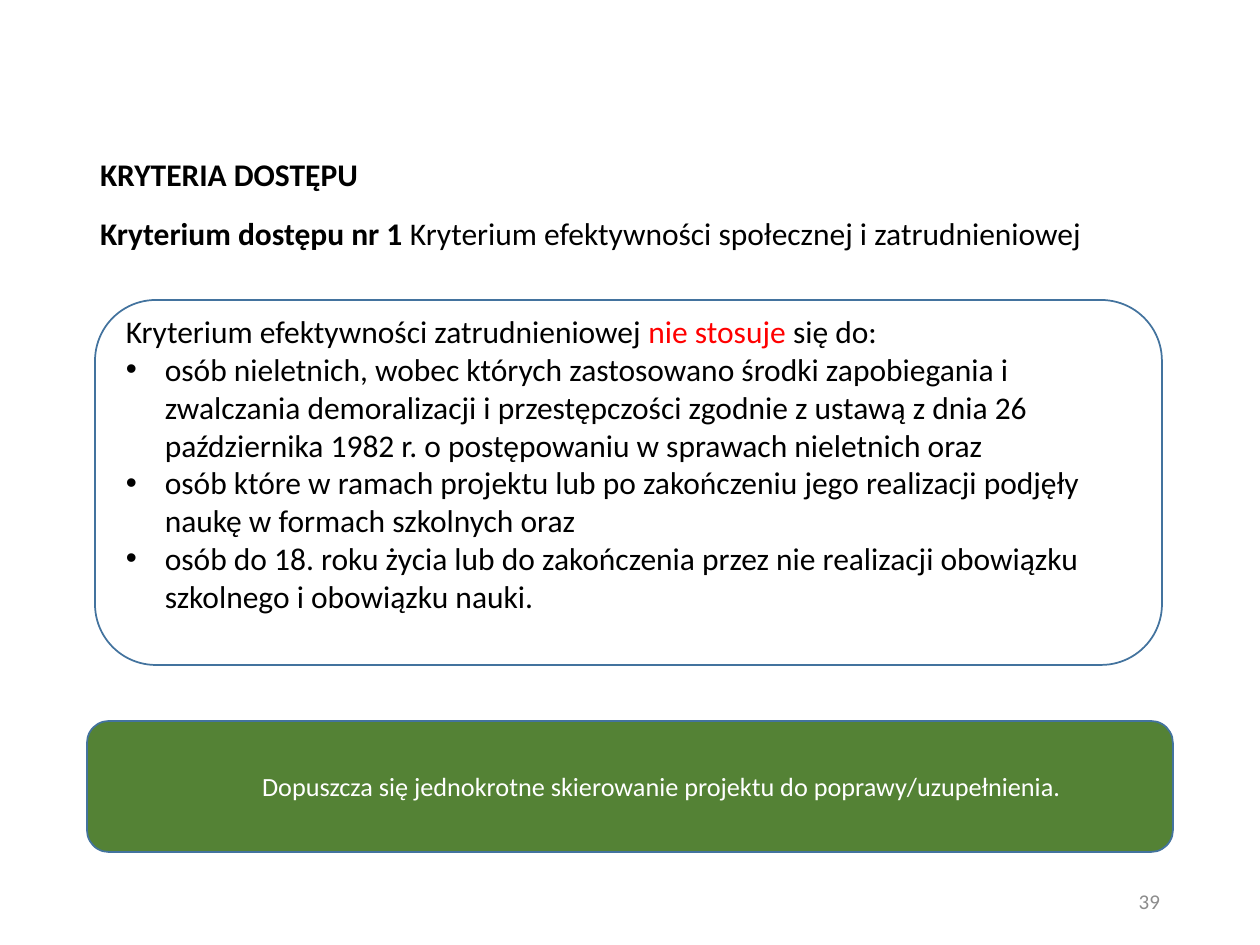
import pptx
import pptx.dml.color
import pptx.enum.shapes
import pptx.enum.text
import pptx.oxml.ns
import pptx.util
import lxml.etree

ALIGN = pptx.enum.text.PP_ALIGN
ANCHOR = pptx.enum.text.MSO_ANCHOR
SCALE = 914400 / 126


def px(length):
    return pptx.util.Emu(round(length * SCALE))


def color(value):
    return pptx.dml.color.RGBColor.from_string(value)


def set_all(target, values):
    for name, value in values.items():
        setattr(target, name, value)


class SlideBuilder:
    font = "Calibri"
    outline = "43739E"
    margins = {"margin_left": 13, "margin_right": 13, "margin_top": 6, "margin_bottom": 6}

    def __init__(self, slide):
        self.slide = slide

    def place(self, shape, box):
        set_all(shape, dict(zip(("left", "top", "width", "height"), map(px, box))))

    def fill_text(self, shape, paragraphs, anchor=ANCHOR.MIDDLE, margins=None):
        frame = shape.text_frame
        set_all(frame, {"word_wrap": True, "vertical_anchor": anchor,
                        "auto_size": pptx.enum.text.MSO_AUTO_SIZE.NONE})
        insets = {**self.margins, **(margins or {})}
        set_all(frame, {name: px(value) for name, value in insets.items()})
        for index, values in enumerate(paragraphs):
            paragraph = frame.add_paragraph() if index else frame.paragraphs[0]
            self.format_paragraph(paragraph, **values)

    def format_paragraph(self, paragraph, runs, size=18, align=ALIGN.LEFT, spacing=1.0,
                         bullet=None, indent=0, hanging=0, level=0):
        properties = paragraph._p.get_or_add_pPr()
        properties.set("marL", str(px(indent)))
        properties.set("indent", str(px(-hanging)))
        tag = "a:buChar" if bullet else "a:buNone"
        if bullet:
            font = lxml.etree.SubElement(properties, pptx.oxml.ns.qn("a:buFont"))
            font.set("typeface", "Arial")
        mark = lxml.etree.SubElement(properties, pptx.oxml.ns.qn(tag))
        if bullet:
            mark.set("char", bullet)
        set_all(paragraph, {"alignment": align, "line_spacing": spacing, "level": level,
                            "space_before": pptx.util.Pt(0)})
        for text, fill, bold in runs:
            run = paragraph.add_run()
            run.text = text
            set_all(run.font, {"name": self.font, "size": pptx.util.Pt(size), "bold": bold})
            run.font.color.rgb = color(fill)

    def placeholder(self, index, box, runs, anchor):
        shape = self.slide.placeholders[index]
        self.place(shape, box)
        self.fill_text(shape, [{"runs": runs, "spacing": 0.9}], anchor)

    def text_box(self, box, paragraphs):
        shape = self.slide.shapes.add_textbox(*map(px, box))
        self.fill_text(shape, paragraphs)

    def panel(self, box, fill, paragraphs, margins=None):
        kind = pptx.enum.shapes.MSO_SHAPE.ROUNDED_RECTANGLE
        shape = self.slide.shapes.add_shape(kind, *map(px, box))
        shape.shadow.inherit = False
        shape.fill.solid()
        shape.fill.fore_color.rgb = color(fill)
        shape.line.color.rgb = color(self.outline)
        shape.line.width = pptx.util.Pt(1)
        self.fill_text(shape, paragraphs, margins=margins)


def main():
    presentation = pptx.Presentation()
    set_all(presentation, {"slide_width": px(1260), "slide_height": px(945)})
    slide = presentation.slides.add_slide(presentation.slide_layouts[1])
    builder = SlideBuilder(slide)
    black, red, white, gray, green = "000000", "FF0000", "FFFFFF", "8C8C8C", "548235"

    builder.placeholder(0, (87, 132, 1086, 89), [("KRYTERIA DOSTĘPU", black, True)], ANCHOR.MIDDLE)
    builder.placeholder(1, (87, 212, 1086, 88), [
        ("Kryterium dostępu nr 1", black, True),
        (" Kryterium efektywności społecznej i zatrudnieniowej", black, False),
    ], ANCHOR.TOP)
    builder.text_box((890, 876, 283, 50),
                     [{"runs": [("39", gray, False)], "size": 12, "align": ALIGN.RIGHT}])

    exemptions = [
        "osób nieletnich, wobec których zastosowano środki zapobiegania i zwalczania "
        "demoralizacji i przestępczości zgodnie z ustawą z dnia 26 października 1982 r. "
        "o postępowaniu w sprawach nieletnich oraz",
        "osób które w ramach projektu lub po zakończeniu jego realizacji podjęły naukę "
        "w formach szkolnych oraz",
        "osób do 18. roku życia lub do zakończenia przez nie realizacji obowiązku "
        "szkolnego i obowiązku nauki.",
    ]
    introduction = {"runs": [
        ("Kryterium efektywności zatrudnieniowej ", black, False),
        ("nie stosuje ", red, False),
        ("się do:", black, False),
    ]}
    bullets = [{"runs": [(text, black, False)], "bullet": "•", "indent": 39, "hanging": 39}
               for text in exemptions]
    builder.panel((95, 300, 1067, 365), white, [introduction, *bullets],
                  {"margin_top": 0, "margin_bottom": 38})

    note = "Dopuszcza się jednokrotne skierowanie projektu do poprawy/uzupełnienia."
    builder.panel((87, 721, 1086, 131), green, [
        {"runs": [(note, white, False)], "size": 15, "align": ALIGN.CENTER,
         "indent": 63, "level": 1}])

    presentation.save("out.pptx")


if __name__ == "__main__":
    main()
